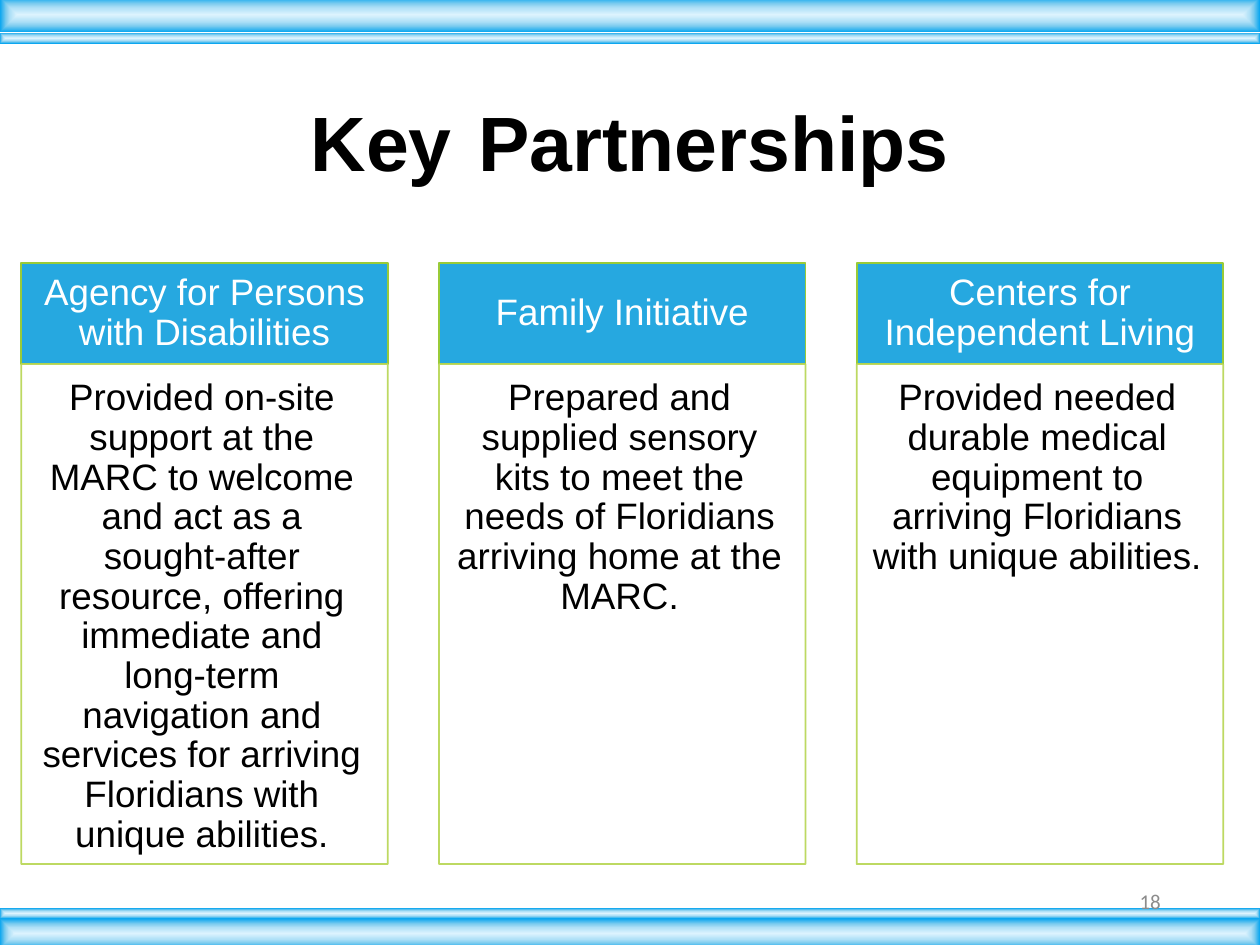
from dataclasses import dataclass

import lxml.etree
import pptx
import pptx.dml.color
import pptx.enum.shapes
import pptx.enum.text
import pptx.oxml
import pptx.oxml.ns
import pptx.util

Cm = pptx.util.Cm
Pt = pptx.util.Pt
RGBColor = pptx.dml.color.RGBColor
Align = pptx.enum.text.PP_ALIGN
Anchor = pptx.enum.text.MSO_ANCHOR
qn = pptx.oxml.ns.qn

BLACK = RGBColor(0x00, 0x00, 0x00)
WHITE = RGBColor(0xFF, 0xFF, 0xFF)
GRAY = RGBColor(0x8C, 0x8C, 0x8C)
HEADER_BLUE = RGBColor(0x26, 0xA8, 0xE0)
HEADER_EDGE = RGBColor(0x99, 0xCB, 0x38)
CARD_EDGE = RGBColor(0xB6, 0xD5, 0x51)
BAR_STOPS = {
    0: RGBColor(0xDC, 0xF3, 0xFE),
    40: RGBColor(0xAF, 0xE0, 0xF7),
    64: RGBColor(0x7E, 0xCC, 0xEF),
    100: RGBColor(0x08, 0xA5, 0xEF),
}

SLIDE_WIDTH, SLIDE_HEIGHT = 25.4, 19.05
COLUMN_LEFT, COLUMN_WIDTH, COLUMN_PITCH = 0.43, 7.39, 8.42
HEADER_TOP, HEADER_HEIGHT, CARD_HEIGHT = 5.31, 2.03, 10.08


@dataclass
class Box:
    left: float
    top: float
    width: float
    height: float

    def lengths(self) -> list:
        return [Cm(n) for n in (self.left, self.top, self.width, self.height)]


@dataclass
class Partner:
    name: str
    contribution: str


@dataclass
class PanelStyle:
    fill: RGBColor
    edge: RGBColor
    opacity: int
    text: RGBColor
    anchor: Anchor
    margins: tuple  # left, top, right, bottom in cm


HEADER = PanelStyle(HEADER_BLUE, HEADER_EDGE, 100, WHITE, Anchor.MIDDLE,
                    (0.41, 0.23, 0.41, 0.23))
CARD = PanelStyle(WHITE, CARD_EDGE, 90, BLACK, Anchor.TOP,
                  (0.3, 0.3, 0.41, 0.46))

BARS = [
    Box(0, 0.66, SLIDE_WIDTH, 0.22),
    Box(0, -0.05, SLIDE_WIDTH, 0.7),
    Box(0, 18.31, SLIDE_WIDTH, 0.21),
    Box(0, 18.52, SLIDE_WIDTH, 0.6),
]
PARTNERS = [
    Partner("Agency for Persons with Disabilities",
            "Provided on-site support at the MARC to welcome and act as a "
            "sought-after resource, offering immediate and long-term navigation "
            "and services for arriving Floridians with unique abilities."),
    Partner("Family Initiative",
            "Prepared and supplied sensory kits to meet the needs of Floridians "
            "arriving home at the MARC."),
    Partner("Centers for Independent Living",
            "Provided needed durable medical equipment to arriving Floridians "
            "with unique abilities."),
]


def apply(target, values: dict) -> None:
    for name, value in values.items():
        setattr(target, name, value)


def add_run(paragraph, text: str, size: float, color: RGBColor,
            font: str = "Arial", bold: bool = False) -> None:
    run = paragraph.add_run()
    run.text = text
    apply(run.font, {"name": font, "size": Pt(size), "bold": bold})
    run.font.color.rgb = color


def add_rectangle(slide, box: Box):
    shape = slide.shapes.add_shape(
        pptx.enum.shapes.MSO_SHAPE.RECTANGLE, *box.lengths())
    shape.shadow.inherit = False
    return shape


def add_bar(slide, box: Box) -> None:
    shape = add_rectangle(slide, box)
    shape.line.fill.background()
    shape.fill.background()
    stops = "".join(
        f'<a:gs pos="{position * 1000}"><a:srgbClr val="{color}"/></a:gs>'
        for position, color in BAR_STOPS.items())
    gradient = pptx.oxml.parse_xml(
        f'<a:gradFill {pptx.oxml.ns.nsdecls("a")} rotWithShape="1">'
        f'<a:gsLst>{stops}</a:gsLst><a:path path="shape">'
        '<a:fillToRect l="50000" t="50000" r="50000" b="50000"/>'
        '</a:path></a:gradFill>')
    properties = shape.element.spPr
    properties.replace(properties.find(qn("a:noFill")), gradient)


def add_panel(slide, box: Box, text: str, style: PanelStyle) -> None:
    shape = add_rectangle(slide, box)
    shape.fill.solid()
    shape.fill.fore_color.rgb = style.fill
    shape.line.color.rgb = style.edge
    shape.line.width = Pt(1)
    if style.opacity < 100:
        for color in shape.element.spPr.iter(qn("a:srgbClr")):
            alpha = lxml.etree.SubElement(color, qn("a:alpha"))
            alpha.set("val", str(style.opacity * 1000))

    left, top, right, bottom = style.margins
    apply(shape.text_frame, {
        "word_wrap": True, "vertical_anchor": style.anchor,
        "margin_left": Cm(left), "margin_top": Cm(top),
        "margin_right": Cm(right), "margin_bottom": Cm(bottom)})
    paragraph = shape.text_frame.paragraphs[0]
    apply(paragraph, {"alignment": Align.CENTER, "line_spacing": 0.9})
    add_run(paragraph, text, 21, style.text)


def add_title(slide) -> None:
    title = slide.shapes.title
    box = Box(1.75, 1.68, 21.9, 2.34)
    apply(title, dict(zip(("left", "top", "width", "height"), box.lengths())))
    apply(title.text_frame, {"word_wrap": True, "vertical_anchor": Anchor.MIDDLE})
    paragraph = title.text_frame.paragraphs[0]
    apply(paragraph, {"alignment": Align.CENTER, "line_spacing": 0.9})
    for text, size in (("Key", 44), (" ", 54), ("Partnerships", 44)):
        add_run(paragraph, text, size, BLACK, bold=True)


def add_slide_number(slide, number: str) -> None:
    text_box = slide.shapes.add_textbox(*Box(17.93, 17.65, 5.72, 1.02).lengths())
    apply(text_box.text_frame, {"word_wrap": True, "vertical_anchor": Anchor.MIDDLE})
    paragraph = text_box.text_frame.paragraphs[0]
    paragraph.alignment = Align.RIGHT
    add_run(paragraph, number, 12, GRAY, font="Calibri")


def main() -> None:
    presentation = pptx.Presentation()
    apply(presentation, {"slide_width": Cm(SLIDE_WIDTH),
                         "slide_height": Cm(SLIDE_HEIGHT)})
    slide = presentation.slides.add_slide(presentation.slide_layouts[5])

    # Gradient bars along the top and bottom edges
    for bar in BARS:
        add_bar(slide, bar)

    add_title(slide)

    # One column per partner: header above a card
    for index, partner in enumerate(PARTNERS):
        left = COLUMN_LEFT + index * COLUMN_PITCH
        add_panel(slide, Box(left, HEADER_TOP, COLUMN_WIDTH, HEADER_HEIGHT),
                  partner.name, HEADER)
        add_panel(slide, Box(left, HEADER_TOP + HEADER_HEIGHT, COLUMN_WIDTH, CARD_HEIGHT),
                  partner.contribution, CARD)

    add_slide_number(slide, "18")
    presentation.save("out.pptx")


if __name__ == "__main__":
    main()
